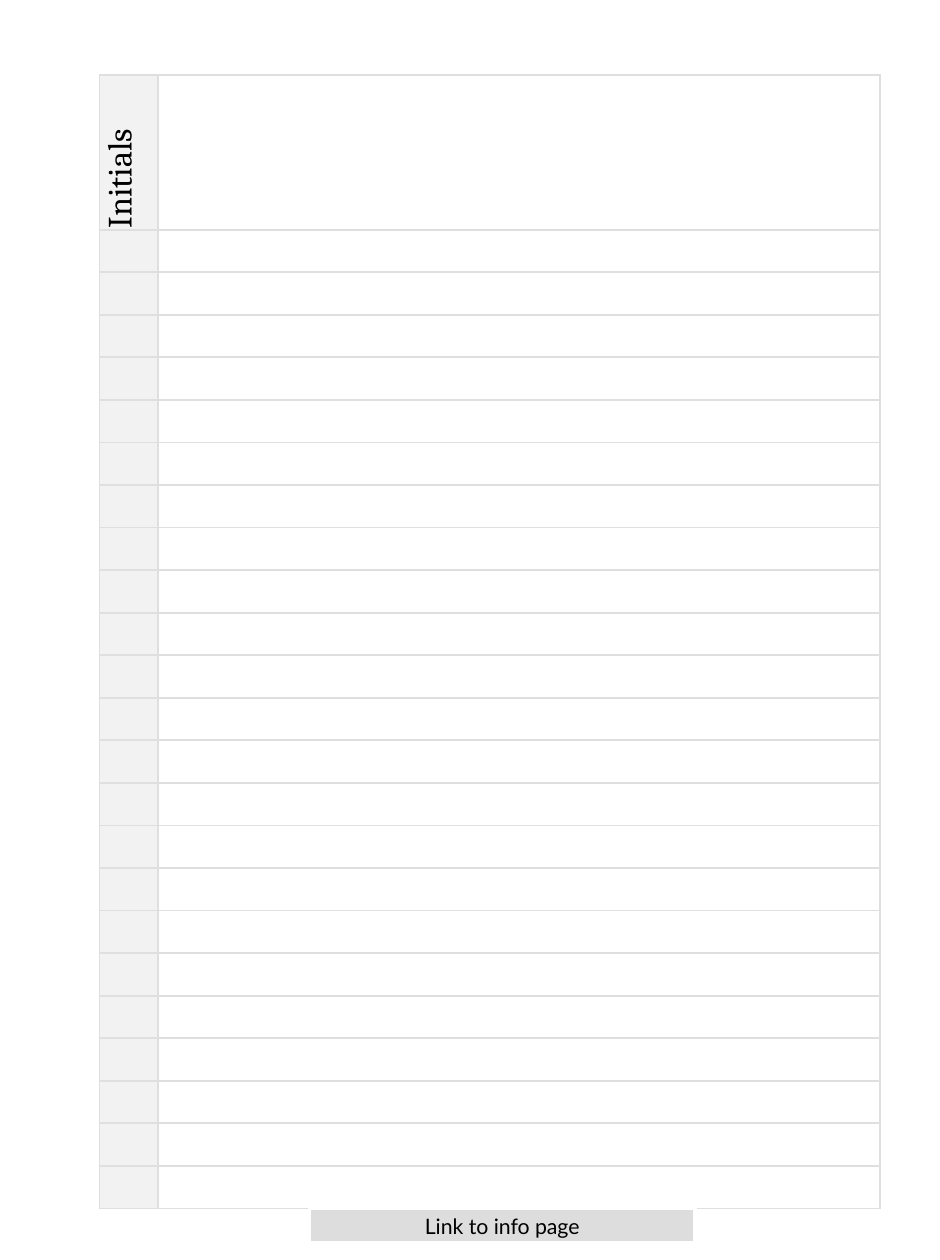
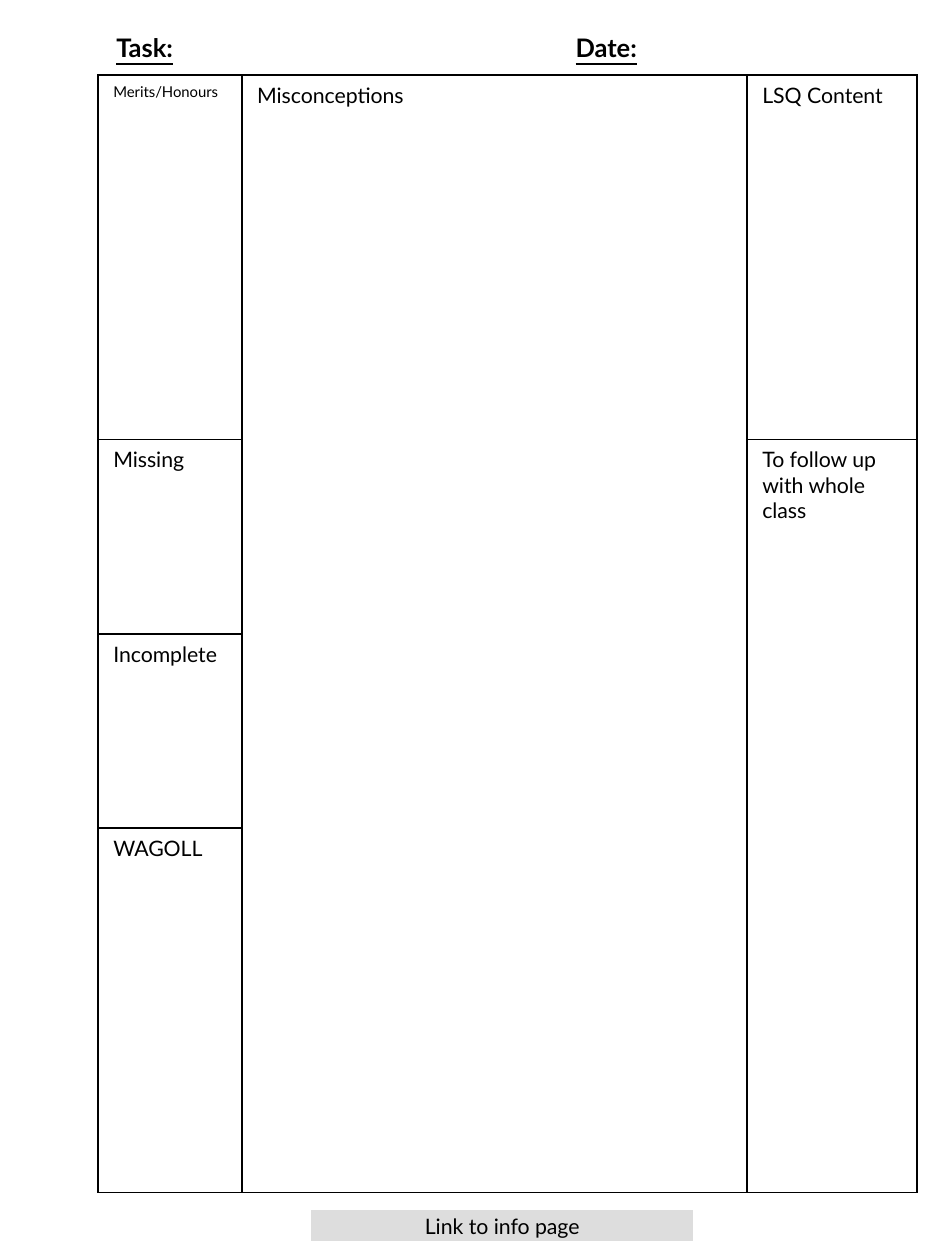
from pptx import Presentation
from pptx.dml.color import RGBColor
from pptx.enum import shapes, text
from pptx.oxml import parse_xml
from pptx.oxml.ns import nsdecls
from pptx.util import Inches, Pt

BLACK, WHITE = "000000", "FFFFFF"
GRID, HEADER_FILL, BUTTON_FILL = "DFDFDF", "F2F2F2", "DDDDDD"
BODY_FONT, INITIALS_FONT = "Lato", "Cambria"


def color(value):
    return RGBColor.from_string(value)


def add_run(p, words, size, font=BODY_FONT, **formats):
    r = p.add_run()
    r.text = words
    r.font.color.rgb = color(BLACK)
    for name, value in {"size": Pt(size), "name": font, **formats}.items():
        setattr(r.font, name, value)


def set_margins(target, left, top, right, bottom):
    for side, value in zip(("left", "top", "right", "bottom"), (left, top, right, bottom)):
        setattr(target, f"margin_{side}", Inches(value))


def set_borders(cell, line_color):
    """Give the cell a one-point line on all four sides."""
    tc_pr = cell._tc.get_or_add_tcPr()
    for i, side in enumerate("LRTB"):
        tc_pr.insert(i, parse_xml(
            f'<a:ln{side} {nsdecls("a")} w="12700"><a:solidFill>'
            f'<a:srgbClr val="{line_color}"/></a:solidFill></a:ln{side}>'))


def add_grid(s, left, top, widths, heights, line_color):
    """Add an unfilled, ruled table with the given column and row sizes."""
    table = s.shapes.add_table(
        len(heights), len(widths), Inches(left), Inches(top),
        Inches(sum(widths)), Inches(sum(heights))).table
    table.first_row = table.horz_banding = False
    for column, width in zip(table.columns, widths):
        column.width = Inches(width)
    for row, height in zip(table.rows, heights):
        row.height = Inches(height)
    for cell in table.iter_cells():
        cell.fill.background()
        set_borders(cell, line_color)
    return table


def add_info_button(s, left=2.02, top=7.89, width=2.52, height=0.23):
    sp = s.shapes.add_shape(shapes.MSO_SHAPE.RECTANGLE, Inches(left), Inches(top),
                            Inches(width), Inches(height))
    sp.shadow.inherit = False
    sp.fill.solid()
    sp.fill.fore_color.rgb = color(BUTTON_FILL)
    sp.line.color.rgb = color(WHITE)
    sp.line.width = Pt(1.5)
    tf = sp.text_frame
    tf.vertical_anchor = text.MSO_ANCHOR.MIDDLE
    p = tf.paragraphs[0]
    p.alignment = text.PP_ALIGN.CENTER
    add_run(p, "Link to info page", 10)


def add_register(s, left, top, height):
    """Add the class list: a tall heading row over equal pupil rows."""
    heading, pupils = 1.01, 23
    rows = [heading] + [(height - heading) / pupils] * pupils
    table = add_grid(s, left, top, [0.38, 4.72], rows, GRID)
    for cell in table.iter_cells():
        set_margins(cell, 0.01, 0.01, 0.01, 0)
        # Small empty text keeps the rows at their set height
        cell.text_frame.paragraphs[0]._p.get_or_add_endParaRPr().set("sz", "800")
    for row in table.rows:
        fill = row.cells[0].fill
        fill.solid()
        fill.fore_color.rgb = color(HEADER_FILL)
    cell = table.cell(0, 0)
    cell.vertical_anchor = text.MSO_ANCHOR.BOTTOM
    cell._tc.get_or_add_tcPr().set("vert", "vert270")
    add_run(cell.text_frame.paragraphs[0], "Initials", 16, INITIALS_FONT)


def add_heading(s, left, top, width, height):
    tf = s.shapes.add_textbox(Inches(left), Inches(top), Inches(width), Inches(height)).text_frame
    tf.word_wrap = True
    tf.margin_left = Inches(0.7)
    p = tf.paragraphs[0]
    tabs = parse_xml(f'<a:tabLst {nsdecls("a")}><a:tab pos="{Inches(3)}" algn="l"/></a:tabLst>')
    p._p.get_or_add_pPr().append(tabs)
    for words, underline in (("Task:", True), ("\t", False), ("Date:", True)):
        add_run(p, words, 12, bold=True, underline=underline)


def add_feedback(s, left, top):
    table = add_grid(s, left, top, [0.94, 3.3, 1.11], [2.38, 1.27, 1.27, 2.38], BLACK)
    table.cell(0, 1).merge(table.cell(3, 1))
    table.cell(1, 2).merge(table.cell(3, 2))
    labels = {
        (0, 0): ("Merits/Honours", 7),
        (0, 1): ("Misconceptions", 10),
        (0, 2): ("LSQ Content", 10),
        (1, 0): ("Missing", 10),
        (1, 2): ("To follow up with whole class", 10),
        (2, 0): ("Incomplete", 10),
        (3, 0): ("WAGOLL", 10),
    }
    for (row, column), (words, size) in labels.items():
        add_run(table.cell(row, column).text_frame.paragraphs[0], words, size)


def add_slide(prs):
    s = prs.slides.add_slide(prs.slide_layouts[6])
    s.background.fill.solid()
    s.background.fill.fore_color.rgb = color(WHITE)
    return s


def main():
    prs = Presentation()
    prs.slide_width, prs.slide_height = Inches(6.14), Inches(8.23)

    s = add_slide(prs)
    add_register(s, 0.65, 0.49, 7.41)
    add_info_button(s)

    s = add_slide(prs)
    add_heading(s, 0.06, 0.16, 5.9, 0.3)
    add_feedback(s, 0.64, 0.49)
    add_info_button(s)

    prs.save("out.pptx")


if __name__ == "__main__":
    main()
